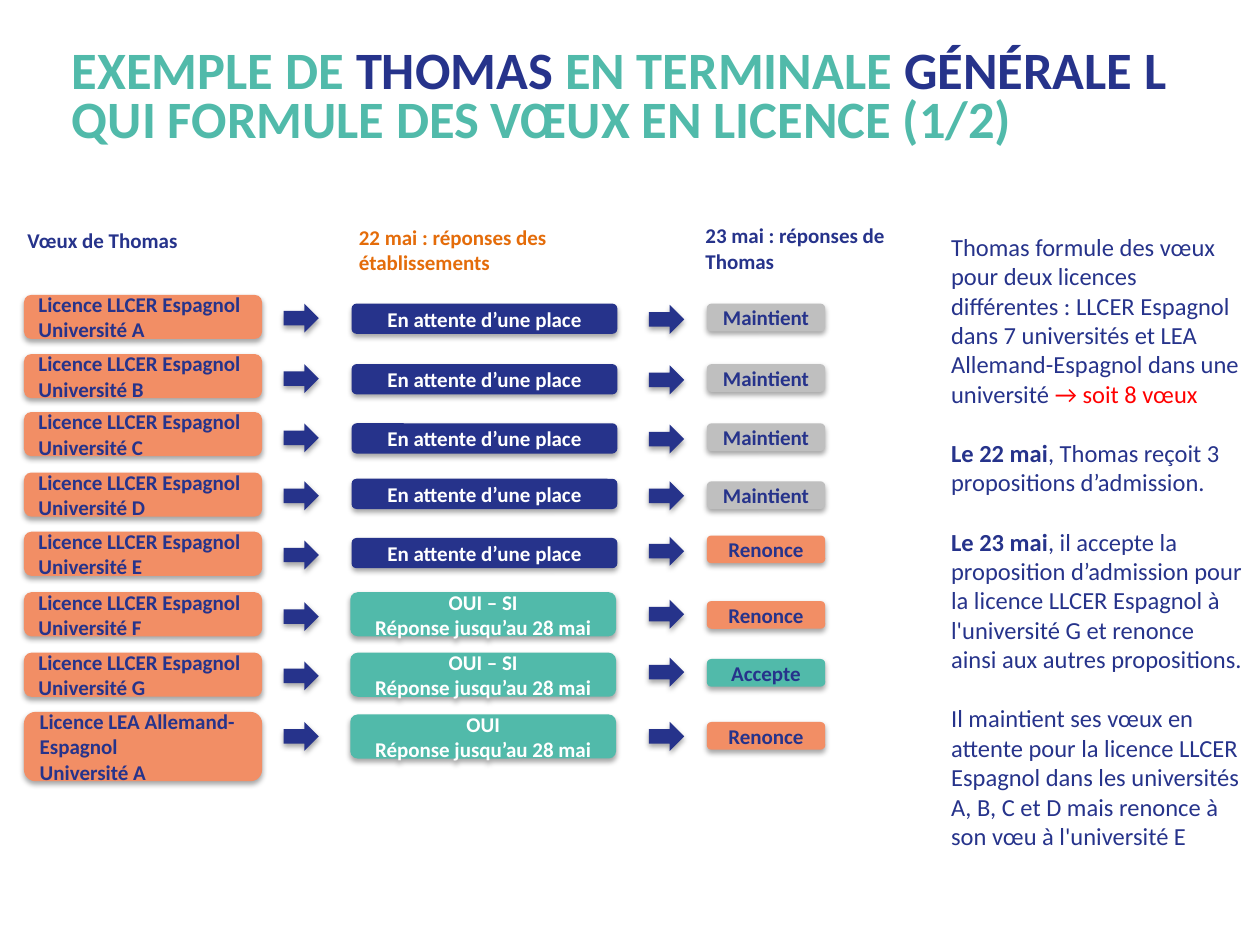
from lxml import etree
from pptx import Presentation
from pptx.dml.color import RGBColor
from pptx.enum.shapes import MSO_SHAPE
from pptx.enum.text import MSO_ANCHOR, MSO_AUTO_SIZE, PP_ALIGN
from pptx.oxml import parse_xml
from pptx.util import Inches, Pt

C = {"teal": "51BAAA", "navy": "26338B", "salmon": "F28E65", "grey": "BFBFBF",
     "orange": "E46C0A", "red": "FF0000", "white": "FFFFFF"}
SHADOW = """<a:effectLst xmlns:a="http://schemas.openxmlformats.org/drawingml/2006/main">
<a:outerShdw blurRad="39400" dist="22900" dir="5400000" rotWithShape="0">
<a:srgbClr val="000000"><a:alpha val="35000"/></a:srgbClr></a:outerShdw></a:effectLst>"""


def write(tf, paragraphs, size, align=PP_ALIGN.LEFT):
    tf.word_wrap = True
    for i, runs in enumerate(paragraphs):
        p = tf.paragraphs[0] if i == 0 else tf.add_paragraph()
        p.alignment = align
        for text, color, bold in runs:
            r = p.add_run()
            r.text = text
            r.font.name = "Calibri"
            r.font.size = Pt(size)
            r.font.bold = bold
            r.font.color.rgb = RGBColor.from_string(C[color])


def block(kind, x, y, w, h, fill, lines=(), color="navy", align=PP_ALIGN.CENTER):
    sp = s.shapes.add_shape(kind, Inches(x), Inches(y), Inches(w), Inches(h))
    sp.fill.solid()
    sp.fill.fore_color.rgb = RGBColor.from_string(C[fill])
    sp.line.fill.background()
    sp._element.spPr.append(parse_xml(SHADOW))
    sp.text_frame.vertical_anchor = MSO_ANCHOR.MIDDLE
    write(sp.text_frame, [[(line, color, True)] for line in lines], 12, align)


prs = Presentation()
prs.slide_width, prs.slide_height = Inches(10), Inches(7.5)
s = prs.slides.add_slide(prs.slide_layouts[5])

title = s.shapes.title
title.left, title.top, title.width, title.height = [Inches(v) for v in (0.47, 0.09, 9.22, 1.41)]
tf = title.text_frame
tf.auto_size = MSO_AUTO_SIZE.NONE
tf.vertical_anchor = MSO_ANCHOR.MIDDLE
write(tf, [[("EXEMPLE DE ", "teal", True), ("THOMAS", "navy", True),
            (" EN TERMINALE ", "teal", True), ("GÉNÉRALE L", "navy", True),
            (" QUI FORMULE DES VŒUX EN LICENCE (1/2)", "teal", True)]], 30)
tf.paragraphs[0].line_spacing = Pt(28)

headings = [
    (0.12, 1.76, 2.13, 0.3, ["Vœux de Thomas"], "navy"),
    (2.75, 1.73, 2.44, 0.51, ["22 mai : réponses des", "établissements"], "orange"),
    (5.5, 1.72, 1.65, 0.51, ["23 mai : réponses de", "Thomas"], "navy"),
]
for x, y, w, h, lines, color in headings:
    tf = s.shapes.add_textbox(Inches(x), Inches(y), Inches(w), Inches(h)).text_frame
    write(tf, [[(line, color, True)] for line in lines], 12)

spanish = "Licence LLCER Espagnol"
waiting = ["En attente d’une place"]
deadline = "Réponse jusqu’au 28 mai"
yes_if = ["OUI – SI", deadline]
decision_fill = {"Maintient": "grey", "Renonce": "salmon", "Accepte": "teal"}

rows = [
    (spanish, "A", waiting, "Maintient", (2.34, 2.41, 2.41, 2.42, 2.41)),
    (spanish, "B", waiting, "Maintient", (2.81, 2.89, 2.89, 2.9, 2.89)),
    (spanish, "C", waiting, "Maintient", (3.27, 3.36, 3.36, 3.37, 3.36)),
    (spanish, "D", waiting, "Maintient", (3.75, 3.82, 3.8, 3.82, 3.82)),
    (spanish, "E", waiting, "Renonce", (4.22, 4.29, 4.27, 4.26, 4.25)),
    (spanish, "F", yes_if, "Renonce", (4.7, 4.78, 4.7, 4.76, 4.77)),
    (spanish, "G", yes_if, "Accepte", (5.18, 5.25, 5.18, 5.22, 5.23)),
    ("Licence LEA Allemand-Espagnol", "A", ["OUI", deadline], "Renonce",
     (5.65, 5.73, 5.67, 5.73, 5.73)),
]
box, arrow = MSO_SHAPE.ROUNDED_RECTANGLE, MSO_SHAPE.RIGHT_ARROW
for course, university, answer, decision, tops in rows:
    wish_y, arrow1_y, answer_y, arrow2_y, decision_y = tops
    block(box, 0.19, wish_y, 1.89, 0.35 if course == spanish else 0.55, "salmon",
          [course, f"Université {university}"], align=PP_ALIGN.LEFT)
    block(arrow, 2.25, arrow1_y, 0.28, 0.23, "navy")
    if answer == waiting:
        block(box, 2.79, answer_y, 2.11, 0.24, "navy", answer, "white")
    else:
        block(box, 2.78, answer_y, 2.11, 0.35, "teal", answer, "white")
    block(arrow, 5.15, arrow2_y, 0.28, 0.23, "navy")
    block(box, 5.61, decision_y, 0.94, 0.22, decision_fill[decision], [decision])

tf = s.shapes.add_textbox(Inches(7.45), Inches(1.79), Inches(2.52), Inches(5.52)).text_frame
write(tf, [
    [("Thomas formule des vœux pour deux licences différentes : LLCER Espagnol dans "
      "7 universités et LEA Allemand-Espagnol dans une université ", "navy", False),
     ("→ soit 8 vœux", "red", False)],
    [("Le 22 mai", "navy", True),
     (", Thomas reçoit 3 propositions d’admission.", "navy", False)],
    [("Le 23 mai", "navy", True),
     (", il accepte la proposition d’admission pour la licence LLCER Espagnol à "
      "l'université G et renonce ainsi aux autres propositions.", "navy", False)],
    [("Il maintient ses vœux en attente pour la licence LLCER Espagnol dans les universités "
      "A, B, C et D mais renonce à son vœu à l'université E", "navy", False)],
], 14)
for p in tf.paragraphs[1:]:
    p.space_before = Pt(17)

prs.save("out.pptx")
